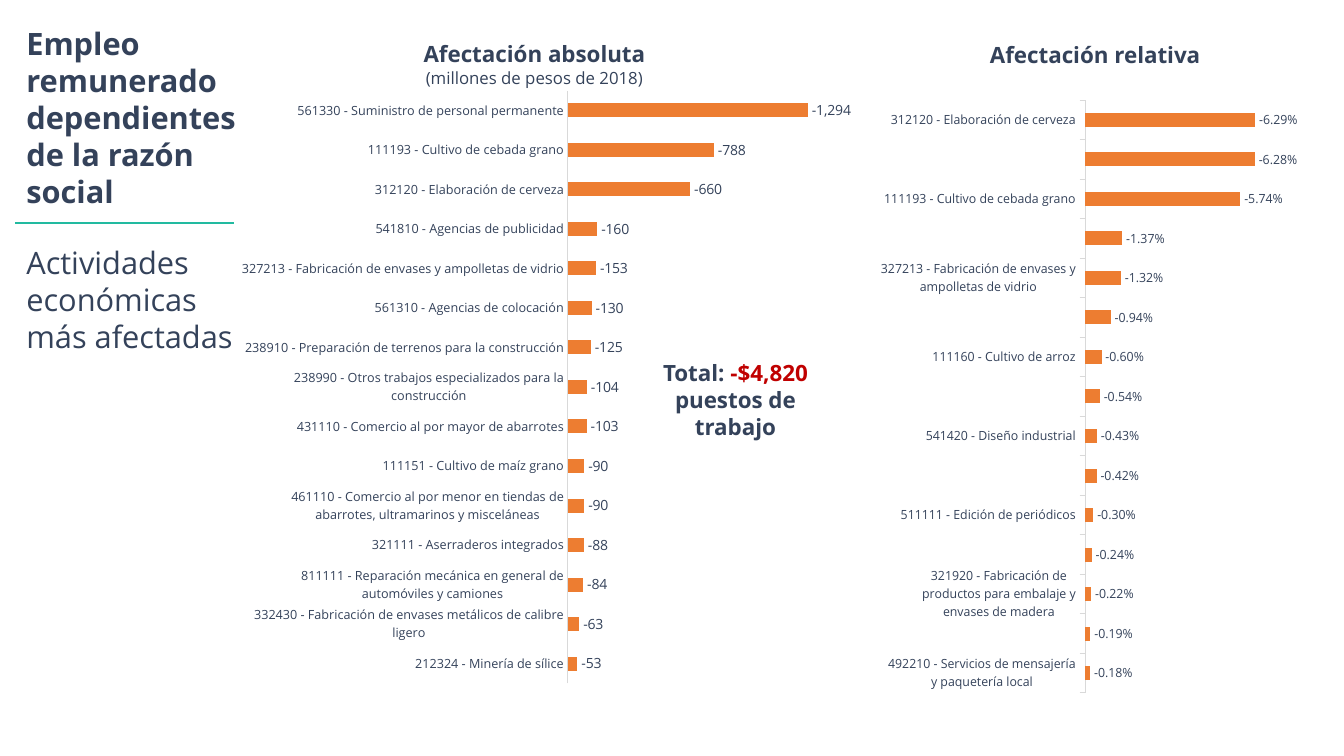
from lxml import etree
from pptx import Presentation
from pptx.chart.data import CategoryChartData
from pptx.dml.color import RGBColor
from pptx.enum.chart import XL_CHART_TYPE as ChartType, XL_LABEL_POSITION as LabelPos
from pptx.enum.chart import XL_TICK_MARK as TickMark
from pptx.enum.shapes import MSO_CONNECTOR as Connector
from pptx.enum.text import MSO_ANCHOR as Anchor, MSO_AUTO_SIZE as AutoSize, PP_ALIGN as Align
from pptx.oxml import parse_xml
from pptx.oxml.ns import nsdecls, qn
from pptx.util import Cm, Pt

FONT = "Open Sans"
NAVY = RGBColor(0x34, 0x42, 0x5A)
ORANGE = RGBColor(0xED, 0x7D, 0x31)
RED = RGBColor(0xC0, 0x00, 0x00)
TEAL = RGBColor(0x22, 0xBA, 0xA0)
GREY = RGBColor(0xD9, 0xD9, 0xD9)
BLACK = RGBColor(0, 0, 0)

ABSOLUTE = [
    ("561330 - Suministro de personal permanente", 1294),
    ("111193 - Cultivo de cebada grano", 788),
    ("312120 - Elaboración de cerveza", 660),
    ("541810 - Agencias de publicidad", 160),
    ("327213 - Fabricación de envases y ampolletas de vidrio", 153),
    ("561310 - Agencias de colocación", 130),
    ("238910 - Preparación de terrenos para la construcción", 125),
    ("238990 - Otros trabajos especializados para la construcción", 104),
    ("431110 - Comercio al por mayor de abarrotes", 103),
    ("111151 - Cultivo de maíz grano", 90),
    ("461110 - Comercio al por menor en tiendas de abarrotes, ultramarinos y misceláneas", 90),
    ("321111 - Aserraderos integrados", 88),
    ("811111 - Reparación mecánica en general de automóviles y camiones", 84),
    ("332430 - Fabricación de envases metálicos de calibre ligero", 63),
    ("212324 - Minería de sílice", 53),
]
# Every second bar has no name on the axis.
RELATIVE = [
    ("312120 - Elaboración de cerveza", 0.0629),
    ("", 0.0628),
    ("111193 - Cultivo de cebada grano", 0.0574),
    ("", 0.0137),
    ("327213 - Fabricación de envases y ampolletas de vidrio", 0.0132),
    ("", 0.0094),
    ("111160 - Cultivo de arroz", 0.006),
    ("", 0.0054),
    ("541420 - Diseño industrial", 0.0043),
    ("", 0.0042),
    ("511111 - Edición de periódicos", 0.003),
    ("", 0.0024),
    ("321920 - Fabricación de productos para embalaje y envases de madera", 0.0022),
    ("", 0.0019),
    ("492210 - Servicios de mensajería y paquetería local", 0.0018),
]


def set_font(font, size, color=NAVY, bold=False):
    font.name, font.size, font.bold = FONT, Pt(size), bold
    font.color.rgb = color


def write_lines(tf, lines, align):
    """Fill a text frame with (text, size, bold) paragraphs."""
    tf.word_wrap = True
    tf.auto_size = AutoSize.NONE
    tf.vertical_anchor = Anchor.MIDDLE
    for i, (text, size, bold) in enumerate(lines):
        p = tf.add_paragraph() if i else tf.paragraphs[0]
        p.alignment = align
        p.text = text
        set_font(p.font, size, bold=bold)


def add_text(s, box, lines):
    tf = s.shapes.add_textbox(*map(Cm, box)).text_frame
    write_lines(tf, lines, Align.CENTER)
    return tf


def set_title(s, box, lines):
    title = s.shapes.title
    title.left, title.top, title.width, title.height = map(Cm, box)
    write_lines(title.text_frame, lines, Align.LEFT)
    title.text_frame.paragraphs[0].space_after = Pt(24)


def add_rule(s, x1, x2, y):
    line = s.shapes.add_connector(Connector.STRAIGHT, Cm(x1), Cm(y), Cm(x2), Cm(y))
    line.line.color.rgb = TEAL
    line.line.width = Pt(1.5)
    etree.SubElement(line._element.spPr, qn("a:effectLst"))


def place_plot(chart, x, y, w, h):
    """Fix the inner plot area, in fractions of the chart."""
    area = chart._chartSpace.chart.plotArea
    for old in area.findall(qn("c:layout")):
        area.remove(old)
    sizes = "".join(f'<c:{k} val="{v}"/>' for k, v in zip("xywh", (x, y, w, h)))
    area.insert(0, parse_xml(
        f'<c:layout {nsdecls("c")}><c:manualLayout><c:layoutTarget val="inner"/>'
        f'<c:xMode val="edge"/><c:yMode val="edge"/>{sizes}</c:manualLayout></c:layout>'))


def add_bars(s, box, rows, plot_box, top, axis_format, label_size, tick):
    data = CategoryChartData(number_format=axis_format)
    names, values = zip(*rows)
    data.categories = names
    data.add_series("Series 1", values)
    chart = s.shapes.add_chart(ChartType.BAR_CLUSTERED, *map(Cm, box), data).chart
    chart.has_legend = chart.has_title = False
    set_font(chart.font, 12, BLACK)
    place_plot(chart, *plot_box)

    cat = chart.category_axis
    cat.reverse_order = True
    cat.has_major_gridlines = False
    cat.major_tick_mark, cat.minor_tick_mark = tick, TickMark.NONE
    set_font(cat.tick_labels.font, 9)
    cat.format.line.color.rgb = GREY
    cat.format.line.width = Pt(0.75)

    val = chart.value_axis
    val.visible = val.has_major_gridlines = False
    val.minimum_scale, val.maximum_scale = 0, top

    plot = chart.plots[0]
    plot.gap_width = 182
    plot.vary_by_categories = False
    fill = plot.series[0].format.fill
    fill.solid()
    fill.fore_color.rgb = ORANGE
    labels = plot.series[0].data_labels
    labels.show_value = True
    labels.position = LabelPos.OUTSIDE_END
    labels.number_format = "\\-" + axis_format
    labels.number_format_is_linked = False
    set_font(labels.font, label_size)


def add_total(s, box):
    tf = add_text(s, box, [("Total: ", 16, True)])
    p = tf.paragraphs[0]
    for text, color in (("-$4,820 ", RED), ("puestos de trabajo", NAVY)):
        r = p.add_run()
        r.text = text
        r.font.color.rgb = color


def main():
    prs = Presentation()
    prs.slide_width, prs.slide_height = Cm(33.87), Cm(19.05)
    s = prs.slides.add_slide(prs.slide_layouts[5])
    add_bars(s, (5.88, 1.74, 15.75, 15.93), ABSOLUTE, (0.535, 0.034, 0.416, 0.938),
             1400, "#,##0", 10, TickMark.NONE)
    add_text(s, (5.38, 0.89, 16.18, 1.45), [("Afectación absoluta", 16, True),
                                            ("(millones de pesos de 2018)", 12, False)])
    add_total(s, (16.26, 8.92, 4.55, 2.31))
    add_bars(s, (22.2, 1.98, 10.57, 15.93), RELATIVE, (0.476, 0.034, 0.461, 0.938),
             0.07, "0.00%", 9, TickMark.OUTSIDE)
    add_text(s, (22.43, 0.91, 10.34, 0.94), [("Afectación relativa", 16, True)])
    set_title(s, (0.41, 0.46, 5.79, 8.64), [
        ("Empleo remunerado dependientes de la razón social", 22, True),
        ("Actividades económicas más afectadas", 22, False)])
    add_rule(s, 0.38, 5.89, 5.61)
    prs.save("out.pptx")


if __name__ == "__main__":
    main()
